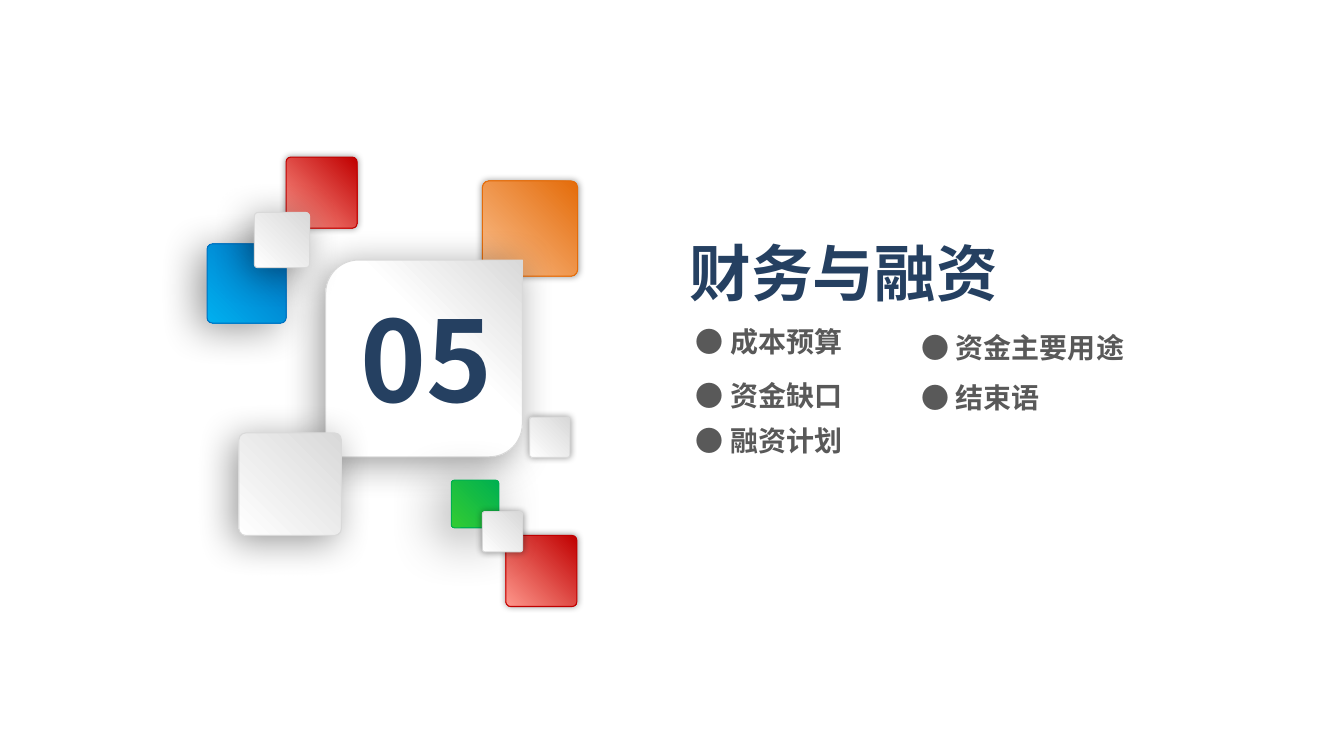
import pptx
import pptx.dml.color
import pptx.enum.shapes
import pptx.enum.text
import pptx.oxml
import pptx.oxml.ns
import pptx.util
import lxml.etree

Pt = pptx.util.Pt
Shape = pptx.enum.shapes.MSO_SHAPE
Align = pptx.enum.text.PP_ALIGN

RED = ("C00000", "FE978C")
ORANGE = ("E46C0A", "FAC090")
BLUE = ("0070C0", "00B0F0")
GREEN = ("00B050", "33CC33")
SILVER = ("D9D9D9", "FFFFFF")

# Shadows: blur, distance (points) and direction (degrees)
GLOW = (5, 0, 0)
DEEP = (27, 6, 135)
DEEP_BLUE = (29, 8, 150)
DEEP_GREEN = (40, 9, 135)

# Tiles behind and in front of the number card: left, top, side, colours, shadow
BACK_TILES = [
    (361.5, 382.5, 50.75, RED, GLOW),
    (344.75, 129.25, 68, ORANGE, GLOW),
    (148, 174.25, 56.5, BLUE, DEEP_BLUE),
    (204.5, 112.25, 50.75, RED, GLOW),
]
FRONT_TILES = [
    (181.75, 151.75, 39.5, SILVER, DEEP),
    (378.5, 298, 28.75, SILVER, GLOW),
    (322.5, 343, 34, GREEN, DEEP_GREEN),
    (170.75, 309.25, 73.25, SILVER, DEEP),
    (344.75, 365.5, 28.75, SILVER, GLOW),
]
# Topics by column: left, width, then text and top
TOPIC_COLUMNS = [
    (490.25, 165, [("成本预算", 228), ("资金缺口", 267), ("融资计划", 299)]),
    (651.5, 188, [("资金主要用途", 232.5), ("结束语", 268)]),
]


def color(hex_string):
    return pptx.dml.color.RGBColor.from_string(hex_string)


class SectionSlide:
    font_name = "Noto Sans CJK SC"
    navy = "254061"
    grey = "595959"

    def __init__(self, presentation):
        self.slide = presentation.slides.add_slide(presentation.slide_layouts[6])

    def text(self, text, left, top, width, height, size, ink, align=Align.LEFT, wrap=True):
        box = self.slide.shapes.add_textbox(Pt(left), Pt(top), Pt(width), Pt(height))
        box.text_frame.word_wrap = wrap
        paragraph = box.text_frame.paragraphs[0]
        paragraph.alignment = align
        run = paragraph.add_run()
        run.text = text
        run.font.size = Pt(size)
        run.font.bold = True
        run.font.color.rgb = color(ink)
        run.font.name = self.font_name
        east_asian = lxml.etree.SubElement(run.font._element, pptx.oxml.ns.qn("a:ea"))
        east_asian.set("typeface", self.font_name)

    def square(self, left, top, side, colors, shadow, kind=Shape.ROUNDED_RECTANGLE,
               corner=0.067, fade_end=1):
        """Draw a square fading from its top right to its bottom left corner."""
        shape = self.slide.shapes.add_shape(kind, Pt(left), Pt(top), Pt(side), Pt(side))
        shape.adjustments[0] = corner
        shape.fill.gradient()
        shape.fill.gradient_angle = 225
        for stop, position, hex_string in zip(shape.fill.gradient_stops, (0, fade_end), colors):
            stop.position = position
            stop.color.rgb = color(hex_string)
        shape.line.color.rgb = color(colors[0])
        shape.line.width = Pt(0.75)
        self.add_shadow(shape, *shadow)

    def add_shadow(self, shape, blur, distance, direction):
        shape.shadow.inherit = False
        effects = shape._element.spPr.find(pptx.oxml.ns.qn("a:effectLst"))
        effects.append(pptx.oxml.parse_xml(
            f'<a:outerShdw {pptx.oxml.ns.nsdecls("a")} blurRad="{Pt(blur)}" '
            f'dist="{Pt(distance)}" dir="{direction * 60000}" algn="ctr" rotWithShape="0">'
            '<a:srgbClr val="000000"><a:alpha val="40000"/></a:srgbClr></a:outerShdw>'))


def main():
    presentation = pptx.Presentation()
    presentation.slide_width = Pt(960.5)
    presentation.slide_height = Pt(540)
    section = SectionSlide(presentation)

    for tile in BACK_TILES:
        section.square(*tile)
    section.square(232.75, 185.75, 140.5, SILVER, DEEP,
                   kind=Shape.ROUND_2_DIAG_RECTANGLE, corner=0.167, fade_end=0.42)
    for tile in FRONT_TILES:
        section.square(*tile)

    section.text("05", 250.5, 203.75, 114.5, 104.5, 80, section.navy, wrap=False)
    section.text("财务与融资", 476.75, 164.25, 252.75, 60.5, 44, section.navy, Align.CENTER)
    for left, width, topics in TOPIC_COLUMNS:
        for topic, top in topics:
            section.text(f"● {topic}", left, top, width, 31.5, 20, section.grey)

    presentation.save("out.pptx")


if __name__ == "__main__":
    main()
